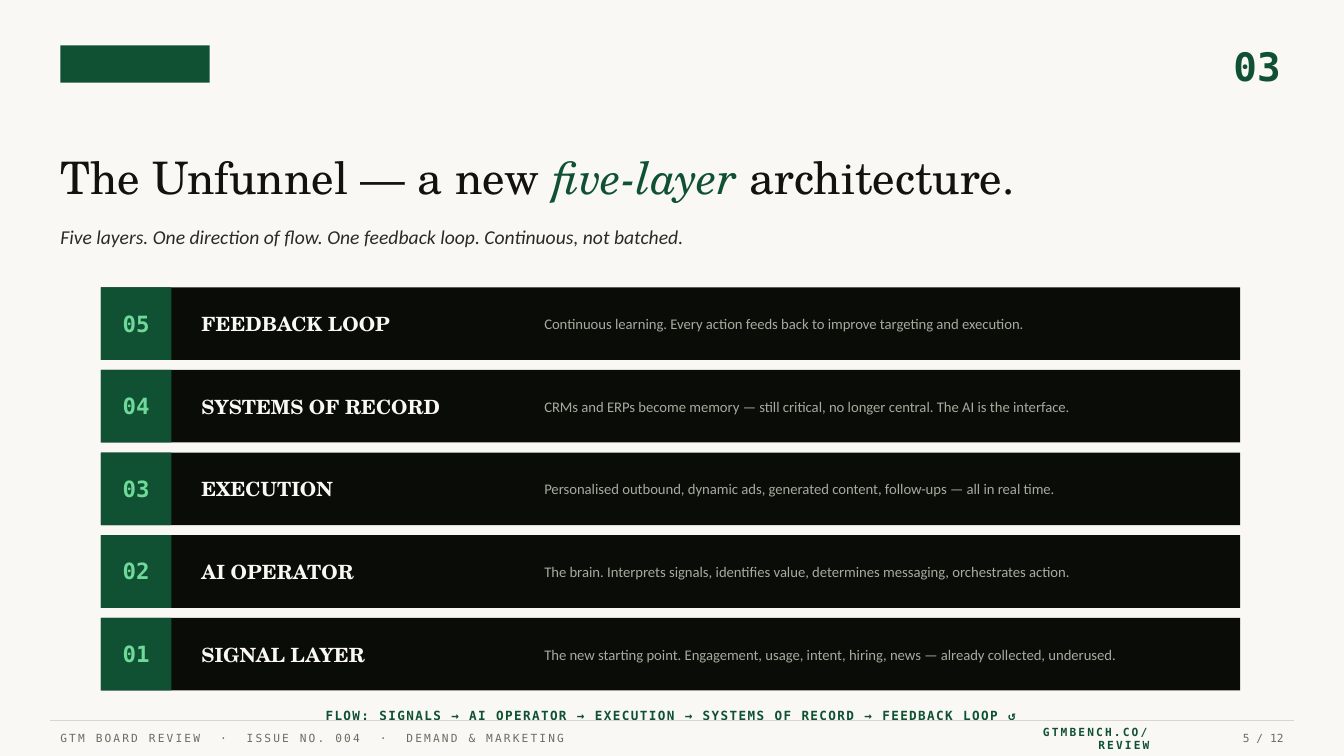
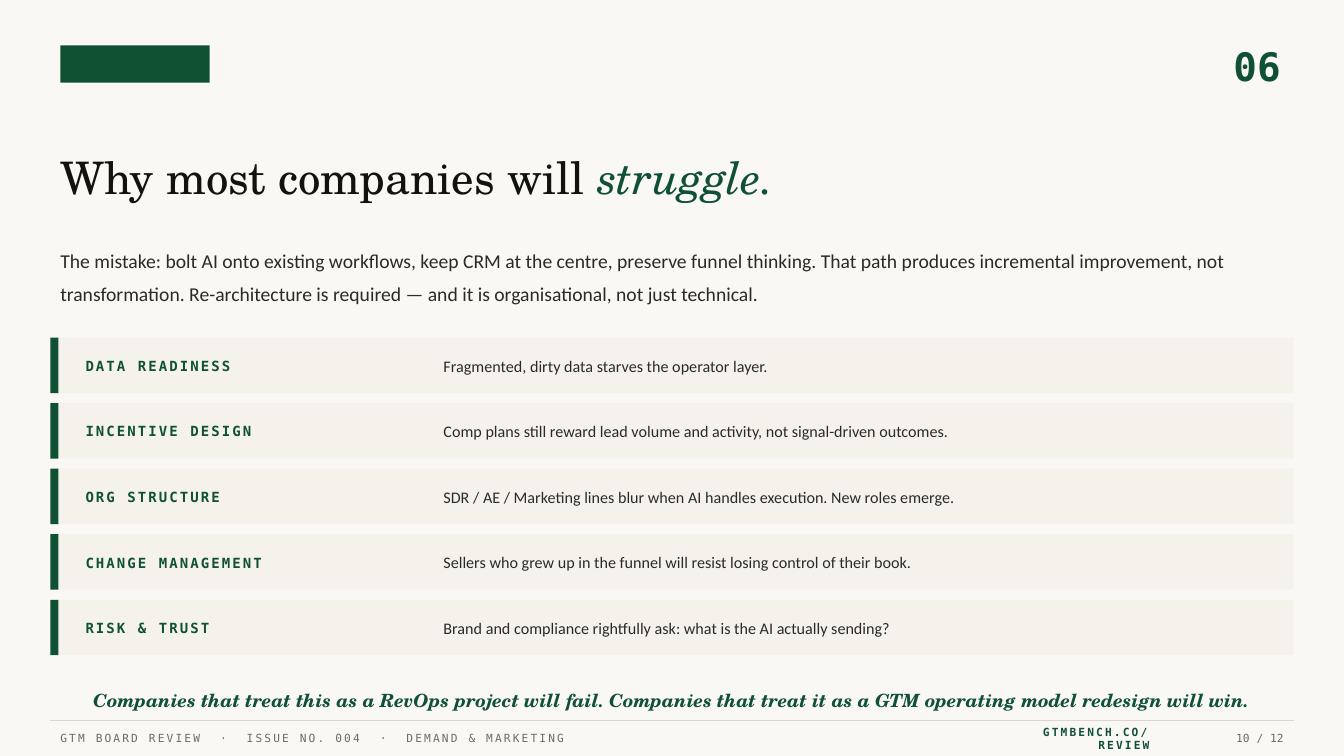
"""Build two review slides: the five-layer architecture and the reasons companies struggle."""
from lxml import etree
from pptx import Presentation
from pptx.dml.color import RGBColor
from pptx.enum.shapes import MSO_CONNECTOR, MSO_SHAPE
from pptx.enum.text import MSO_ANCHOR, PP_ALIGN
from pptx.oxml.ns import qn
from pptx.util import Inches, Pt

RECTANGLE, STRAIGHT = MSO_SHAPE.RECTANGLE, MSO_CONNECTOR.STRAIGHT
LEFT, CENTER, RIGHT = PP_ALIGN.LEFT, PP_ALIGN.CENTER, PP_ALIGN.RIGHT
MIDDLE = MSO_ANCHOR.MIDDLE

SERIF, MONO, SANS = "TeX Gyre Schola", "DejaVu Sans Mono", "Calibri"
BOLD, ITALIC = {"bold": True}, {"italic": True}
THEME = {
    "colours": {
        "paper": "FAF8F4", "ink": "12130F", "green": "0F5132", "mint": "6FD99A",
        "body": "2A2B25", "black": "0A0C08", "sage": "A8AA9E", "cream": "F5F2EC",
        "rule": "D9D6CF", "grey": "6B6D63",
    },
    "styles": {
        "section": (MONO, 28, "green", 0, BOLD),
        "title": (SERIF, 32, "ink", 0, {}),
        "title accent": (SERIF, 32, "green", 0, ITALIC),
        "subtitle": (SANS, 14, "body", 0, ITALIC),
        "lead": (SANS, 14, "body", 0, {}),
        "layer number": (MONO, 16, "mint", 0, BOLD),
        "layer name": (SERIF, 14, "paper", 0, BOLD),
        "layer note": (SANS, 10.5, "sage", 0, {}),
        "hurdle name": (MONO, 10, "green", 1.5, BOLD),
        "hurdle note": (SANS, 11.5, "body", 0, {}),
        "flow": (MONO, 9, "green", 1, BOLD),
        "verdict": (SERIF, 13, "green", 0, BOLD | ITALIC),
        "footer": (MONO, 8, "grey", 1.5, {}),
        "footer dot": (MONO, 8, "grey", 7.8, {}),
        "folio": (MONO, 8, "grey", 0, {}),
        "address": (MONO, 8, "green", 1.5, BOLD),
    },
}

PAGES = [
    {
        "section": "03",
        "folio": "5 / 12",
        "title": [("The Unfunnel — a new ", "title"), ("five-layer ", "title accent"),
                  ("architecture.", "title")],
        "intro": ("Five layers. One direction of flow. One feedback loop. Continuous, not batched.",
                  "subtitle", (0.5, 2.15, 12.3, 0.4), 1),
        "band": {"left": 1, "top": 2.85, "width": 11.3, "height": 0.72, "pitch": 0.82,
                 "tab": 0.7, "fill": "black"},
        "columns": [("layer number", 1, 0.08, 0.7, 0.55, CENTER),
                    ("layer name", 1.9, 0.1, 3.2, 0.52, LEFT),
                    ("layer note", 5.3, 0.1, 6.8, 0.52, LEFT)],
        "rows": [
            ("05", "FEEDBACK LOOP",
             "Continuous learning. Every action feeds back to improve targeting and execution."),
            ("04", "SYSTEMS OF RECORD",
             "CRMs and ERPs become memory — still critical, no longer central. The AI is the interface."),
            ("03", "EXECUTION",
             "Personalised outbound, dynamic ads, generated content, follow-ups — all in real time."),
            ("02", "AI OPERATOR",
             "The brain. Interprets signals, identifies value, determines messaging, orchestrates action."),
            ("01", "SIGNAL LAYER",
             "The new starting point. Engagement, usage, intent, hiring, news — already collected, underused."),
        ],
        "closing": ("FLOW: SIGNALS → AI OPERATOR → EXECUTION → SYSTEMS OF RECORD → FEEDBACK LOOP ↺",
                    "flow", (0.5, 6.95, 12.3, 0.3)),
    },
    {
        "section": "06",
        "folio": "10 / 12",
        "title": [("Why most companies will ", "title"), ("struggle.", "title accent")],
        "intro": ("The mistake: bolt AI onto existing workflows, keep CRM at the centre, preserve "
                  "funnel thinking. That path produces incremental improvement, not transformation. "
                  "Re-architecture is required — and it is organisational, not just technical.",
                  "lead", (0.5, 2.25, 12.3, 0.9), 1.4),
        "band": {"left": 0.5, "top": 3.35, "width": 12.33, "height": 0.55, "pitch": 0.65,
                 "tab": 0.08, "fill": "cream"},
        "columns": [("hurdle name", 0.75, 0.08, 3.5, 0.4, LEFT),
                    ("hurdle note", 4.3, 0.08, 8.3, 0.4, LEFT)],
        "rows": [
            ("DATA READINESS", "Fragmented, dirty data starves the operator layer."),
            ("INCENTIVE DESIGN",
             "Comp plans still reward lead volume and activity, not signal-driven outcomes."),
            ("ORG STRUCTURE",
             "SDR / AE / Marketing lines blur when AI handles execution. New roles emerge."),
            ("CHANGE MANAGEMENT",
             "Sellers who grew up in the funnel will resist losing control of their book."),
            ("RISK & TRUST",
             "Brand and compliance rightfully ask: what is the AI actually sending?"),
        ],
        "closing": ("Companies that treat this as a RevOps project will fail. "
                    "Companies that treat it as a GTM operating model redesign will win.",
                    "verdict", (0.5, 6.75, 12.3, 0.4)),
    },
]


def add_text(page, place, spans, align=LEFT, line_spacing=1):
    box = page.shapes.add_textbox(*map(Inches, place))
    frame = box.text_frame
    frame.word_wrap = True
    frame.vertical_anchor = MIDDLE
    para = frame.paragraphs[0]
    para.alignment = align
    para.line_spacing = line_spacing
    for text, style in spans:
        name, size, colour, spacing, emphasis = THEME["styles"][style]
        span = para.add_run()
        span.text = text
        for key, value in {"name": name, "size": Pt(size), **emphasis}.items():
            setattr(span.font, key, value)
        span.font.color.rgb = RGBColor.from_string(THEME["colours"][colour])
        if spacing:
            span.font._element.set("spc", str(round(spacing * 100)))


def add_bar(page, place, colour):
    bar = page.shapes.add_shape(RECTANGLE, *map(Inches, place))
    bar.shadow.inherit = False
    bar.fill.solid()
    bar.fill.fore_color.rgb = RGBColor.from_string(THEME["colours"][colour])
    bar.line.fill.background()


deck = Presentation()
deck.slide_width, deck.slide_height = Inches(13.33), Inches(7.5)
paper = deck.slide_master.background.fill
paper.solid()
paper.fore_color.rgb = RGBColor.from_string(THEME["colours"]["paper"])

for content in PAGES:
    page = deck.slides.add_slide(deck.slide_layouts[6])

    add_bar(page, (0.6, 0.45, 1.48, 0.37), "green")
    add_text(page, (11.5, 0.4, 1.3, 0.5), [(content["section"], "section")], RIGHT)
    add_text(page, (0.5, 1.4, 12.3, 0.7), content["title"])
    text, style, place, line_spacing = content["intro"]
    add_text(page, place, [(text, style)], LEFT, line_spacing)

    band = content["band"]
    for index, row in enumerate(content["rows"]):
        top = band["top"] + index * band["pitch"]
        add_bar(page, (band["left"], top, band["width"], band["height"]), band["fill"])
        add_bar(page, (band["left"], top, band["tab"], band["height"]), "green")
        for text, (style, left, offset, width, height, align) in zip(row, content["columns"]):
            add_text(page, (left, top + offset, width, height), [(text, style)], align)

    text, style, place = content["closing"]
    add_text(page, place, [(text, style)], CENTER)

    rule = page.shapes.add_connector(STRAIGHT, *map(Inches, (0.5, 7.15, 12.83, 7.15)))
    rule.line.color.rgb = RGBColor.from_string(THEME["colours"]["rule"])
    rule.line.width = Pt(0.75)
    etree.SubElement(rule._element.spPr, qn("a:effectLst"))

    add_text(page, (0.5, 7.2, 8, 0.25), [
        ("GTM BOARD REVIEW", "footer"), (" ·", "footer dot"),
        (" ISSUE NO. 004", "footer"), (" ·", "footer dot"),
        (" DEMAND & MARKETING", "footer")])
    add_text(page, (11.5, 7.2, 1.33, 0.25), [(content["folio"], "folio")], RIGHT)
    add_text(page, (10, 7.2, 1.5, 0.25), [("GTMBENCH.CO/REVIEW", "address")], RIGHT)

deck.save("out.pptx")
